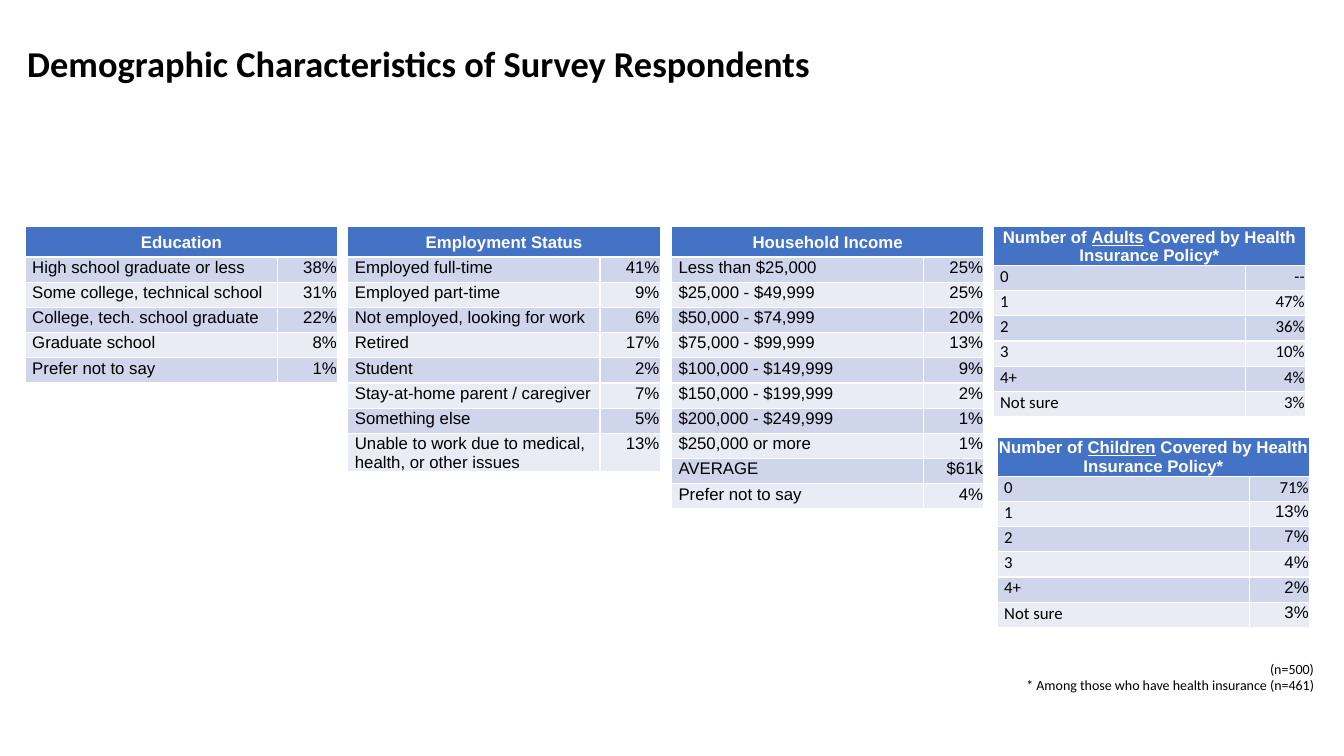
from pptx import Presentation
from pptx.dml.color import RGBColor
from pptx.enum.text import MSO_ANCHOR as Anchor, MSO_AUTO_SIZE as Fit, PP_ALIGN as Align
from pptx.util import Inches, Pt


def color(code):
    return RGBColor.from_string(code)


def style(par, font, size, code="000000", bold=False):
    for run in par.runs:
        run.font.name = font
        run.font.size = Pt(size)
        run.font.bold = bold
        run.font.color.rgb = color(code)


deck = Presentation()
deck.slide_width, deck.slide_height = Inches(13.33), Inches(7.5)
slide = deck.slides.add_slide(deck.slide_layouts[5])

title = slide.shapes.title
title.left, title.top = Inches(0.17), Inches(0.03)
title.width, title.height = Inches(13), Inches(1.25)
frame = title.text_frame
frame.text = "Demographic Characteristics of Survey Respondents"
frame.auto_size = Fit.NONE
frame.vertical_anchor = Anchor.MIDDLE
par = frame.paragraphs[0]
par.alignment = Align.LEFT
par.line_spacing = 0.9
par.space_after = Pt(3)
style(par, "Calibri", 26, bold=True)

# Left, top, height, header row, last row, label font, value font, heading, rows.
# A heading part between bars is underlined.
tables = [
    (0.25, 2.25, 1.55, 0.3, 0.25, "Arial", "Arial", "Education", [
        ("High school graduate or less", "38%"),
        ("Some college, technical school", "31%"),
        ("College, tech. school graduate", "22%"),
        ("Graduate school", "8%"),
        ("Prefer not to say", "1%")]),
    (3.45, 2.25, 2.46, 0.3, 0.1, "Arial", "Arial", "Employment Status", [
        ("Employed full-time", "41%"),
        ("Employed part-time", "9%"),
        ("Not employed, looking for work", "6%"),
        ("Retired", "17%"),
        ("Student", "2%"),
        ("Stay-at-home parent / caregiver", "7%"),
        ("Something else", "5%"),
        ("Unable to work due to medical, health, or other issues", "13%")]),
    (6.66, 2.25, 2.8, 0.3, 0.25, "Arial", "Arial", "Household Income", [
        ("Less than $25,000", "25%"),
        ("$25,000 - $49,999", "25%"),
        ("$50,000 - $74,999", "20%"),
        ("$75,000 - $99,999", "13%"),
        ("$100,000 - $149,999", "9%"),
        ("$150,000 - $199,999", "2%"),
        ("$200,000 - $249,999", "1%"),
        ("$250,000 or more", "1%"),
        ("AVERAGE", "$61k"),
        ("Prefer not to say", "4%")]),
    (9.85, 2.25, 1.91, 0.18, 0.25, "Calibri", "Calibri",
     "Number of |Adults| Covered by Health Insurance Policy*", [
        ("0", "--"), ("1", "47%"), ("2", "36%"),
        ("3", "10%"), ("4+", "4%"), ("Not sure", "3%")]),
    (9.89, 4.34, 1.91, 0.18, 0.25, "Calibri", "Arial",
     "Number of |Children| Covered by Health Insurance Policy*", [
        ("0", "71%"), ("1", "13%"), ("2", "7%"),
        ("3", "4%"), ("4+", "2%"), ("Not sure", "3%")]),
]

for left, top, high, first, last, face, font, head, rows in tables:
    shape = slide.shapes.add_table(len(rows) + 1, 2, Inches(left), Inches(top),
                                   Inches(3.1), Inches(high))
    table = shape.table
    table.columns[0].width, table.columns[1].width = Inches(2.5), Inches(0.6)
    for row in table.rows:
        row.height = Inches(0.25)
    table.rows[0].height = Inches(first)
    table.rows[len(rows)].height = Inches(last)
    shape.height = Inches(high)

    for cell in table.iter_cells():
        cell.margin_left = cell.margin_right = cell.margin_top = Inches(0.01)
        cell.margin_bottom = 0
        cell.fill.solid()
        cell.fill.fore_color.rgb = color("4472C4")

    cell = table.cell(0, 0)
    cell.merge(table.cell(0, 1))
    cell.vertical_anchor = Anchor.MIDDLE
    par = cell.text_frame.paragraphs[0]
    par.alignment = Align.CENTER
    for i, part in enumerate(head.split("|")):
        run = par.add_run()
        run.text = part
        run.font.underline = i == 1
    style(par, "Arial", 12, "FFFFFF", True)

    for r, pair in enumerate(rows, 1):
        for c, text in enumerate(pair):
            cell = table.cell(r, c)
            cell.fill.fore_color.rgb = color("CFD5EA" if r % 2 else "E9EBF5")
            cell.text_frame.text = text
            par = cell.text_frame.paragraphs[0]
            if c == 0:
                par._p.get_or_add_pPr().set("marL", str(Inches(0.06)))
            else:
                par.alignment = Align.RIGHT
            # The 0 row keeps one font for label and value.
            style(par, face if c == 0 or pair[0] == "0" else font, 12)

note = slide.shapes.add_textbox(Inches(9.75), Inches(6.5), Inches(3.38), Inches(0.44))
frame = note.text_frame
frame.word_wrap = True
frame.auto_size = Fit.SHAPE_TO_FIT_TEXT
frame.text = "(n=500)\n* Among those who have health insurance (n=461)"
for par in frame.paragraphs:
    par.alignment = Align.RIGHT
    style(par, "Calibri", 10)

deck.save("out.pptx")
